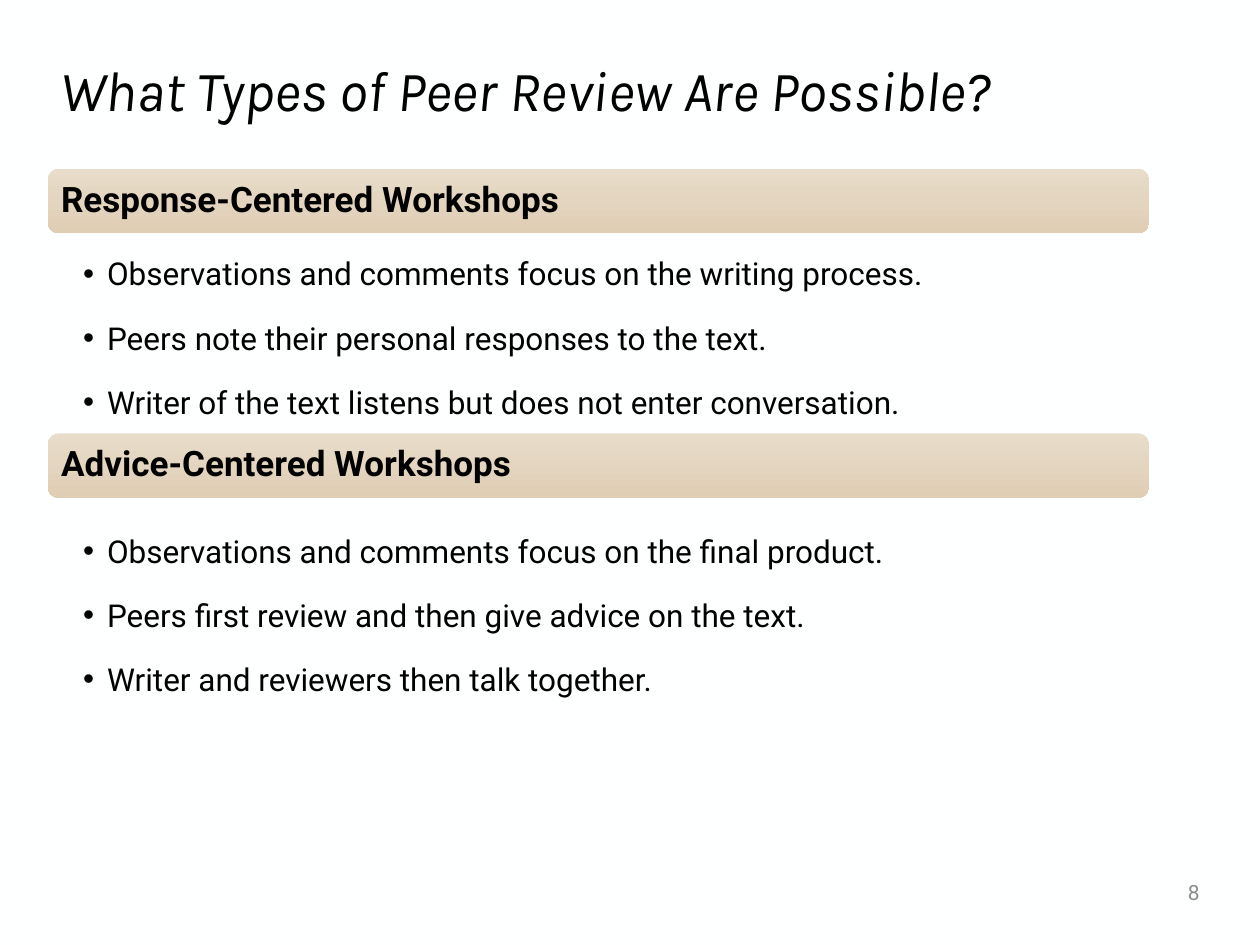
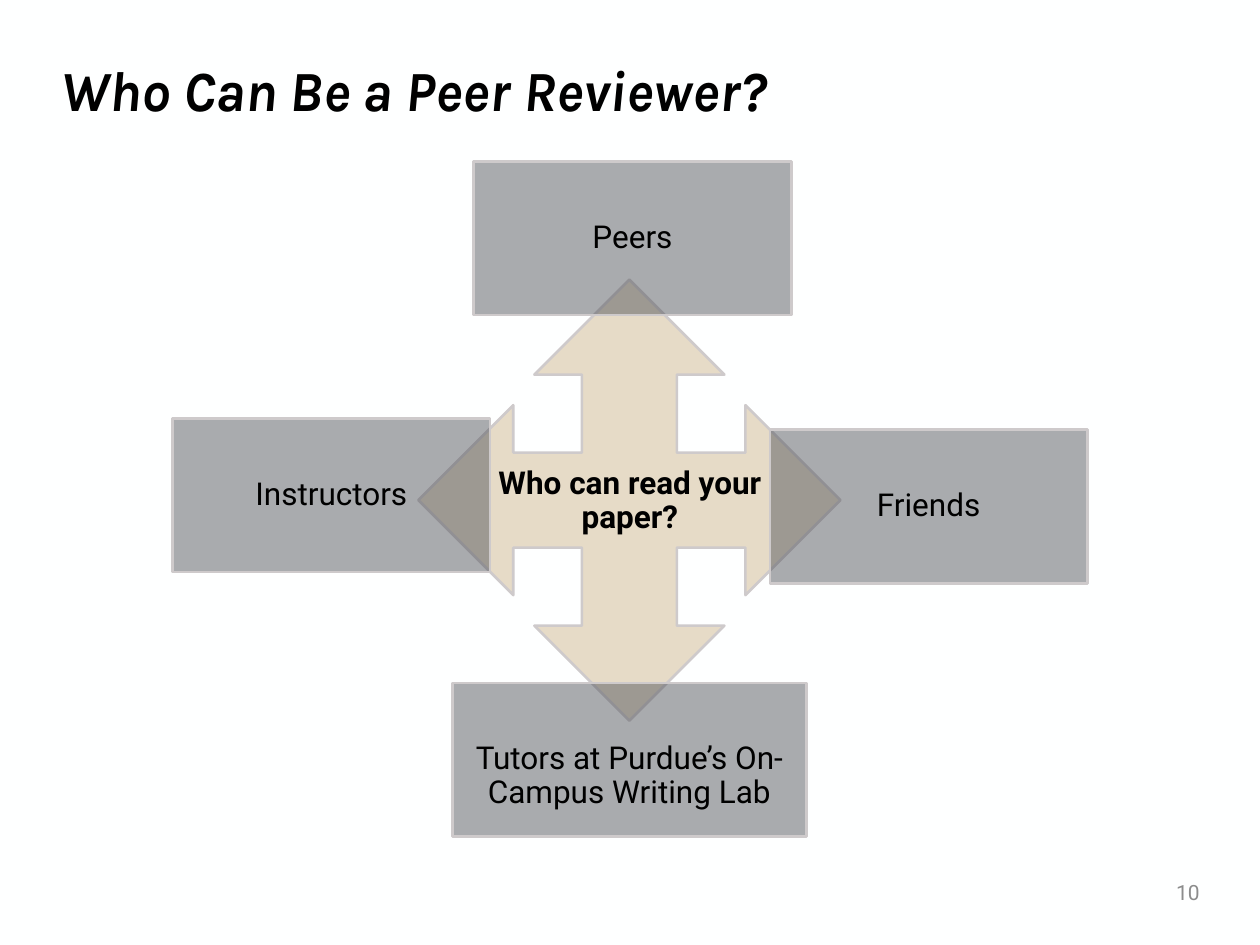
from dataclasses import dataclass, field

from lxml import etree
from pptx import Presentation
from pptx.dml.color import RGBColor
from pptx.enum import shapes, text
from pptx.oxml import ns
from pptx.util import Pt

PAPER, INK, GREY = "FEFFFF", "000000", "8C8C8C"
GOLD, SLATE, EDGE = "CFB991", "55585F", "CECACB"
FADE = ("E8DCCA", "DFCEB4")
LEFT, WIDE = 27.36, 629.28
KIND = shapes.MSO_SHAPE
MID = text.MSO_ANCHOR.MIDDLE
ALIGN = text.PP_ALIGN


@dataclass(frozen=True)
class Box:
    x: float
    y: float
    w: float
    h: float


@dataclass(frozen=True)
class Style:
    size: float
    face: str = "Roboto"
    tint: str = INK
    font: dict = field(default_factory=dict)
    para: dict = field(default_factory=dict)
    frame: dict = field(default_factory=dict)
    inset: tuple = (7.2, 3.6, 7.2, 3.6)
    mark: bool = False


@dataclass(frozen=True)
class Group:
    head: str
    top: float
    gap: float
    items: tuple


@dataclass(frozen=True)
class Node:
    label: str
    x: float
    y: float
    w: float = 181.44
    drop: float = 0


TITLE = Style(32.4, "Karla", font={"italic": True},
              para={"line_spacing": 0.9}, frame={"vertical_anchor": MID})
STRONG = Style(32.4, "Karla", font={"italic": True, "bold": True},
               para={"line_spacing": 0.9}, frame={"vertical_anchor": MID})
PAGE = Style(12, tint=GREY, para={"alignment": ALIGN.RIGHT},
             frame={"vertical_anchor": MID})
HEAD = Style(20, font={"bold": True},
             para={"alignment": ALIGN.LEFT, "line_spacing": 0.9},
             frame={"vertical_anchor": MID}, inset=(5.76,) * 4)
ITEM = Style(18, para={"level": 1, "line_spacing": 1.5, "space_after": Pt(4.3)},
             frame={"vertical_anchor": text.MSO_ANCHOR.TOP},
             inset=(20.16, 2.16, 10.08, 2.16), mark=True)
CENTRE = {"alignment": ALIGN.CENTER, "line_spacing": 0.9}

GROUPS = (
    Group("Response-Centered Workshops", 96.48, 36, (
        "Observations and comments focus on the writing process.",
        "Peers note their personal responses to the text.",
        "Writer of the text listens but does not enter conversation.")),
    Group("Advice-Centered Workshops", 247.68, 43.2, (
        "Observations and comments focus on the final product.",
        "Peers first review and then give advice on the text.",
        "Writer and reviewers then talk together.")),
)
NODES = (
    Node("Peers", 270.72, 92.16),
    Node("Friends", 439.92, 245.52),
    Node("Tutors at Purdue’s On-Campus Writing Lab", 258.48, 390.24, 202.32, 19),
    Node("Instructors", 98.64, 239.04),
)


def paint(colour, code: str) -> None:
    colour.rgb = RGBColor.from_string(code)


def apply(thing, values: dict) -> None:
    for key, value in values.items():
        setattr(thing, key, value)


def place(box: Box) -> tuple:
    return Pt(box.x), Pt(box.y), Pt(box.w), Pt(box.h)


def bullet(para) -> None:
    props = para._p.get_or_add_pPr()
    props.set("marL", str(Pt(13.68)))
    props.set("indent", str(Pt(-13.68)))
    for tag, key, value in (("a:buFont", "typeface", "Arial"),
                            ("a:buChar", "char", "•")):
        etree.SubElement(props, ns.qn(tag)).set(key, value)


def write(shape, lines: tuple, style: Style) -> None:
    frame = shape.text_frame
    sides = ("margin_left", "margin_top", "margin_right", "margin_bottom")
    apply(frame, {"word_wrap": True, **style.frame,
                  **{side: Pt(gap) for side, gap in zip(sides, style.inset)}})
    for at, line in enumerate(lines):
        para = frame.add_paragraph() if at else frame.paragraphs[0]
        apply(para, style.para)
        if style.mark:
            bullet(para)
        run = para.add_run()
        run.text = line
        apply(run.font, {"size": Pt(style.size), "name": style.face, **style.font})
        paint(run.font.color, style.tint)


def label(slide, box: Box, lines: tuple, style: Style) -> None:
    write(slide.shapes.add_textbox(*place(box)), lines, style)


def form(slide, kind, box: Box):
    shape = slide.shapes.add_shape(kind, *place(box))
    shape.shadow.inherit = False
    return shape


def glass(slide, kind, box: Box, code: str):
    shape = form(slide, kind, box)
    shape.fill.solid()
    paint(shape.fill.fore_color, code)
    tone = shape._element.spPr.find(".//" + ns.qn("a:srgbClr"))
    etree.SubElement(tone, ns.qn("a:alpha")).set("val", "50000")
    paint(shape.line.color, EDGE)
    shape.line.width = Pt(1.5)
    return shape


def band(slide, box: Box, head: str) -> None:
    shape = form(slide, KIND.ROUNDED_RECTANGLE, box)
    shape.fill.gradient()
    shape.fill.gradient_angle = 270
    for stop, code in zip(shape.fill.gradient_stops, FADE):
        paint(stop.color, code)
    shape.line.fill.background()
    write(shape, (head,), HEAD)


def start(deck, title: str, style: Style, page: int):
    slide = deck.slides.add_slide(deck.slide_layouts[6])
    slide.background.fill.solid()
    paint(slide.background.fill.fore_color, PAPER)
    label(slide, Box(LEFT, 30.24, 665.28, 46.08), (title,), style)
    label(slide, Box(606.24, 495.36, 86.4, 28.8), (str(page),), PAGE)
    return slide


def types(deck) -> None:
    slide = start(deck, "What Types of Peer Review Are Possible?", TITLE, 8)
    for group in GROUPS:
        band(slide, Box(LEFT, group.top, WIDE, 36.72), group.head)
        label(slide, Box(LEFT, group.top + group.gap, WIDE, 100.8),
              group.items, ITEM)


def readers(deck) -> None:
    slide = start(deck, "Who Can Be a Peer Reviewer?", STRONG, 10)
    glass(slide, KIND.QUAD_ARROW, Box(239.04, 159.84, 241.2, 252), GOLD)
    ask = Style(18, font={"bold": True}, para=CENTRE,
                frame={"vertical_anchor": MID}, inset=(2.16,) * 4)
    label(slide, Box(266.4, 259.2, 187.2, 54), ("Who can read your paper?",), ask)
    for node in NODES:
        shape = glass(slide, KIND.FLOWCHART_PROCESS,
                      Box(node.x, node.y, node.w, 87.84), SLATE)
        style = Style(18, para=CENTRE, frame={"vertical_anchor": MID},
                      inset=(2.16, 2.16 + node.drop, 2.16, 2.16))
        write(shape, (node.label,), style)


def main() -> None:
    deck = Presentation()
    apply(deck, {"slide_width": Pt(720), "slide_height": Pt(540)})
    types(deck)
    readers(deck)
    deck.save("out.pptx")


if __name__ == "__main__":
    main()
